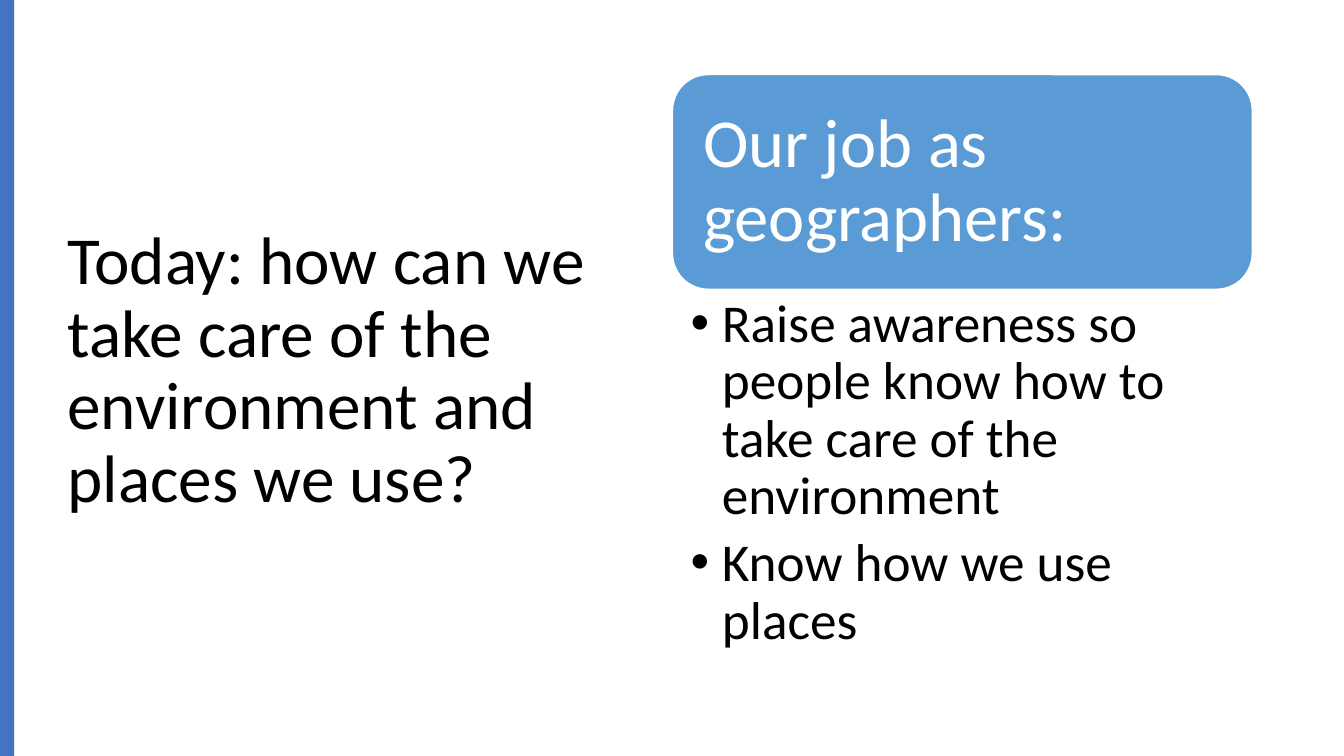
from lxml import etree
from pptx import Presentation
from pptx.dml.color import RGBColor
from pptx.enum.shapes import MSO_SHAPE
from pptx.enum.text import MSO_ANCHOR, MSO_AUTO_SIZE, PP_ALIGN
from pptx.oxml.ns import qn
from pptx.util import Emu, Pt

RECT, ROUND = MSO_SHAPE.RECTANGLE, MSO_SHAPE.ROUNDED_RECTANGLE
TOP, MIDDLE = MSO_ANCHOR.TOP, MSO_ANCHOR.MIDDLE
LEFT = PP_ALIGN.LEFT
NO_FIT = MSO_AUTO_SIZE.NONE
TITLE_ONLY = 5
FONT = "Calibri"
BLACK, WHITE, SIDE_BLUE, CARD_BLUE = "000000", "FFFFFF", "4472C4", "5B9BD5"

TITLE = "Today: how can we take care of the environment and places we use?"
HEADING = "Our job as geographers:"
JOBS = [
    "Raise awareness so people know how to take care of the environment",
    "Know how we use places",
]


def px(n):
    """Length in EMU, at 100 px to the inch."""
    return Emu(n * 9144)


def rgb(color):
    return RGBColor.from_string(color)


def add_block(s, kind, box, fill, line=None):
    sp = s.shapes.add_shape(kind, *map(px, box))
    sp.shadow.inherit = False
    sp.fill.solid()
    sp.fill.fore_color.rgb = rgb(fill)
    if line:
        sp.line.color.rgb = rgb(line)
        sp.line.width = Pt(1)
    else:
        sp.line.fill.background()
    return sp


def add_bullet(p, indent):
    pPr = p._p.get_or_add_pPr()
    pPr.set("marL", str(px(indent)))
    pPr.set("indent", str(-px(indent)))
    etree.SubElement(pPr, qn("a:buFont")).set("typeface", "Arial")
    etree.SubElement(pPr, qn("a:buChar")).set("char", "•")


def write(sp, texts, size, color, insets, anchor=MIDDLE, after=0, bullets=False):
    """Fill a shape with paragraphs; insets are left, top, right, bottom."""
    tf = sp.text_frame
    tf.word_wrap = True
    tf.auto_size = NO_FIT
    tf.vertical_anchor = anchor
    tf.margin_left, tf.margin_top, tf.margin_right, tf.margin_bottom = map(px, insets)
    for i, text in enumerate(texts):
        p = tf.add_paragraph() if i else tf.paragraphs[0]
        p.alignment = LEFT
        p.line_spacing = 0.9
        p.space_before = Pt(0)
        p.space_after = Pt(after)
        if bullets:
            add_bullet(p, 31)
        r = p.add_run()
        r.text = text
        r.font.name = FONT
        r.font.size = Pt(size)
        r.font.color.rgb = rgb(color)


def main():
    prs = Presentation()
    prs.slide_width, prs.slide_height = px(1333), px(750)
    s = prs.slides.add_slide(prs.slide_layouts[TITLE_ONLY])

    title = s.shapes.title
    title.left, title.top, title.width, title.height = map(px, (57, 68, 567, 602))
    write(title, [TITLE], 48, BLACK, (10, 5, 10, 5))

    add_block(s, RECT, (0, 0, 14, 750), SIDE_BLUE)

    card = add_block(s, ROUND, (667, 74, 575, 213), CARD_BLUE, WHITE)
    write(card, [HEADING], 49, WHITE, (20, 20, 20, 20))

    jobs = s.shapes.add_textbox(*map(px, (667, 287, 575, 377)))
    write(jobs, JOBS, 38, BLACK, (18, 7, 38, 7), TOP, after=7, bullets=True)

    prs.save("out.pptx")


if __name__ == "__main__":
    main()
